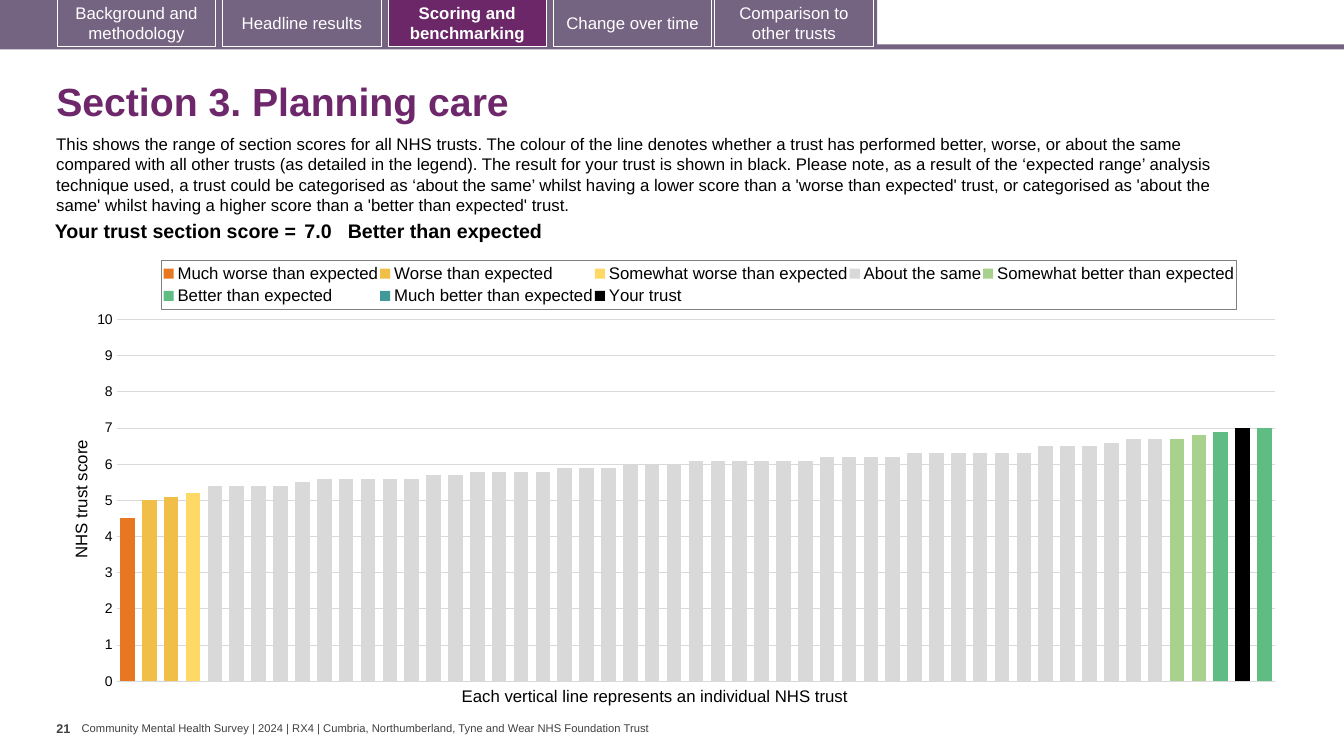
from copy import deepcopy
from lxml.etree import SubElement
from pptx import Presentation
from pptx.chart.data import CategoryChartData
from pptx.dml.color import RGBColor
from pptx.enum.chart import XL_CHART_TYPE, XL_LEGEND_POSITION, XL_TICK_MARK
from pptx.enum.shapes import MSO_SHAPE
from pptx.enum.text import MSO_ANCHOR, PP_ALIGN
from pptx.oxml.ns import qn
from pptx.util import Pt

PX = 9144
FONT = "Arial"
BLACK = RGBColor(0, 0, 0)
WHITE = RGBColor(255, 255, 255)
MAUVE = RGBColor(0x75, 0x63, 0x82)
PLUM = RGBColor(0x6B, 0x27, 0x68)
TITLE = RGBColor(0x6D, 0x27, 0x6A)
DARK = RGBColor(0x40, 0x40, 0x40)
GRID = RGBColor(0xD9, 0xD9, 0xD9)
FRAME = RGBColor(0x80, 0x80, 0x80)

BARS = [(0, 44, 1333, 5), (0, 0, 870, 47)]
TABS = [
    (57, "Background and methodology"),
    (221, "Headline results"),
    (385, "Scoring and benchmarking"),
    (549, "Change over time"),
    (709, "Comparison to other trusts"),
]
ACTIVE = 385
INTRO = (
    "This shows the range of section scores for all NHS trusts. The colour of the line "
    "denotes whether a trust has performed better, worse, or about the same compared with "
    "all other trusts (as detailed in the legend). The result for your trust is shown in "
    "black. Please note, as a result of the ‘expected range’ analysis technique used, a "
    "trust could be categorised as ‘about the same’ whilst having a lower score than a "
    "'worse than expected' trust, or categorised as 'about the same' whilst having a higher "
    "score than a 'better than expected' trust."
)
FOOTER = (
    "Community Mental Health Survey | 2024 | RX4 | "
    "Cumbria, Northumberland, Tyne and Wear NHS Foundation Trust"
)
AXIS = "Each vertical line represents an individual NHS trust"
SCORE = [
    (263, "Your trust section score =", PP_ALIGN.RIGHT, 4),
    (47, "7.0", PP_ALIGN.LEFT, 4),
    (859, "Better than expected", PP_ALIGN.LEFT, 0),
]
COUNT = 53
SAME = [
    5.4, 5.4, 5.4, 5.4, 5.5, 5.6, 5.6, 5.6, 5.6, 5.6, 5.7, 5.7, 5.8, 5.8, 5.8,
    5.8, 5.9, 5.9, 5.9, 6, 6, 6, 6.1, 6.1, 6.1, 6.1, 6.1, 6.1, 6.2, 6.2, 6.2,
    6.2, 6.3, 6.3, 6.3, 6.3, 6.3, 6.3, 6.5, 6.5, 6.5, 6.6, 6.7, 6.7,
]
BANDS = [
    ("Much worse than expected", RGBColor(0xE8, 0x77, 0x22), 1, [4.5]),
    ("Worse than expected", RGBColor(0xF1, 0xBE, 0x48), 2, [5, 5.1]),
    ("Somewhat worse than expected", RGBColor(0xFF, 0xD9, 0x66), 4, [5.2]),
    ("About the same", GRID, 5, SAME),
    ("Somewhat better than expected", RGBColor(0xA9, 0xD1, 0x8E), 49, [6.7, 6.8]),
    ("Better than expected", RGBColor(0x5F, 0xBD, 0x83), 51, [6.9, 7, 7]),
    ("Much better than expected", RGBColor(0x41, 0x99, 0x99), 1, []),
    ("Your trust", BLACK, 52, [7]),
]


def px(*nums):
    return [n * PX for n in nums]


def style(font, size, color, bold=False):
    font.name, font.size, font.bold = FONT, Pt(size), bold
    font.color.rgb = color


def write(frame, text, size, color, bold=False, align=PP_ALIGN.LEFT):
    frame.text = text
    para = frame.paragraphs[0]
    para.alignment = align
    style(para.runs[0].font, size, color, bold)
    return para


def label(box, text, size, color, bold=False, inset=(10, 5), anchor=MSO_ANCHOR.TOP):
    frame = slide.shapes.add_textbox(*px(*box)).text_frame
    frame.word_wrap = True
    frame.margin_left = frame.margin_right = inset[0] * PX
    frame.margin_top = frame.margin_bottom = inset[1] * PX
    frame.vertical_anchor = anchor
    return write(frame, text, size, color, bold)


def block(box, fill):
    shape = slide.shapes.add_shape(MSO_SHAPE.RECTANGLE, *px(*box))
    shape.shadow.inherit = False
    shape.fill.solid()
    shape.fill.fore_color.rgb = fill
    shape.line.fill.background()
    return shape


def place(node, index, **spots):
    for old in node.findall(qn("c:layout")):
        node.remove(old)
    layout = SubElement(node, qn("c:layout"))
    node.insert(index, layout)
    manual = SubElement(layout, qn("c:manualLayout"))
    for tag, value in spots.items():
        SubElement(manual, qn("c:" + tag)).set("val", str(value))


def split(area):
    bars, cat, val = [area.find(qn("c:" + t)) for t in ("barChart", "catAx", "valAx")]
    twins = [deepcopy(part) for part in (bars, cat, val)]
    bars.remove(bars.findall(qn("c:ser"))[-1])
    for item in twins[0].findall(qn("c:ser"))[:-1]:
        twins[0].remove(item)
    ids = {cat.find(qn("c:axId")).get("val"): "5001", val.find(qn("c:axId")).get("val"): "5002"}
    for twin in twins:
        for tag in ("c:axId", "c:crossAx"):
            for ref in twin.findall(qn(tag)):
                ref.set("val", ids[ref.get("val")])
    for tag in ("c:majorGridlines", "c:title"):
        twins[2].remove(twins[2].find(qn(tag)))
    for tag, value in (("axPos", "r"), ("majorTickMark", "out"),
                       ("tickLblPos", "none"), ("crosses", "max")):
        twins[2].find(qn("c:" + tag)).set("val", value)
    bars.addnext(twins[0])
    val.addnext(twins[2])
    twins[2].addnext(twins[1])


def draw_tabs():
    for box in BARS:
        block(box, MAUVE)
    for left, text in TABS:
        on = left == ACTIVE
        tab = block((left, -1, 157, 47), PLUM if on else MAUVE)
        tab.line.color.rgb = WHITE
        tab.line.width = Pt(0.75)
        tab.text_frame.word_wrap = True
        tab.text_frame.vertical_anchor = MSO_ANCHOR.MIDDLE
        write(tab.text_frame, text, 12, WHITE, on, PP_ALIGN.CENTER)


def draw_chart():
    data = CategoryChartData()
    data.categories = [str(n + 1) for n in range(COUNT)]
    for name, _, first, scores in BANDS:
        row = [None] * (first - 1) + scores
        data.add_series(name, row + [None] * (COUNT - len(row)))
    chart = slide.shapes.add_chart(
        XL_CHART_TYPE.COLUMN_CLUSTERED, *px(67, 247, 1215, 444), data).chart
    style(chart.font, 10, BLACK)
    chart.has_title = False
    plot = chart.plots[0]
    plot.gap_width, plot.overlap = 50, 100
    plot.vary_by_categories = False
    for series, band in zip(plot.series, BANDS):
        series.format.fill.solid()
        series.format.fill.fore_color.rgb = band[1]
    chart.category_axis.visible = False

    axis = chart.value_axis
    axis.minimum_scale, axis.maximum_scale, axis.major_unit = 0, 10, 1
    axis.major_tick_mark = axis.minor_tick_mark = XL_TICK_MARK.NONE
    axis.format.line.fill.background()
    axis.major_gridlines.format.line.color.rgb = GRID
    axis.major_gridlines.format.line.width = Pt(0.75)
    axis.tick_labels.number_format = "0"
    axis.tick_labels.number_format_is_linked = False
    style(axis.tick_labels.font, 10, BLACK)
    write(axis.axis_title.text_frame, "NHS trust score", 12, BLACK)
    place(axis.axis_title._element, 1, xMode="edge", yMode="edge", x=0, y=0.42)

    chart.has_legend = True
    legend = chart.legend
    legend.position = XL_LEGEND_POSITION.TOP
    legend.include_in_layout = False
    style(legend.font, 12, BLACK)
    node = legend._element
    place(node, 1, xMode="edge", yMode="edge", x=0.077, y=0.025, w=0.877, h=0.11)
    props = SubElement(node, qn("c:spPr"))
    node.find(qn("c:txPr")).addprevious(props)
    fill = SubElement(SubElement(props, qn("a:ln"), w="9525"), qn("a:solidFill"))
    SubElement(fill, qn("a:srgbClr"), val=str(FRAME))

    area = chart._chartSpace.find(".//" + qn("c:plotArea"))
    place(area, 0, layoutTarget="inner", xMode="edge", yMode="edge",
          x=0.04, y=0.158, w=0.946, h=0.808)
    split(area)


def draw_score():
    table = slide.shapes.add_table(1, len(SCORE), *px(35, 215, 1169, 31)).table
    table.first_row = table.horz_banding = False
    for n, (width, text, align, inset) in enumerate(SCORE):
        table.columns[n].width = width * PX
        cell = table.cell(0, n)
        cell.fill.background()
        cell.margin_left = cell.margin_right = inset * PX
        cell.margin_top = cell.margin_bottom = 4 * PX
        write(cell.text_frame, text, 14, BLACK, True, align)


deck = Presentation()
deck.slide_width, deck.slide_height = px(1333, 750)
slide = deck.slides.add_slide(deck.slide_layouts[6])
label((81, 716, 571, 13), FOOTER, 8, DARK, inset=(0, 0), anchor=MSO_ANCHOR.MIDDLE)
draw_tabs()
head = label((46, 67, 1249, 72), "Section 3. Planning care", 28, TITLE, True,
             anchor=MSO_ANCHOR.MIDDLE)
head.line_spacing = 0.9
label((56, 710, 25, 40), "21", 9, DARK, True, inset=(0, 5))
label((46, 128, 1213, 91), INTRO, 12, BLACK)
label((448, 675, 411, 30), AXIS, 12, BLACK)
draw_chart()
draw_score()
deck.save("out.pptx")
